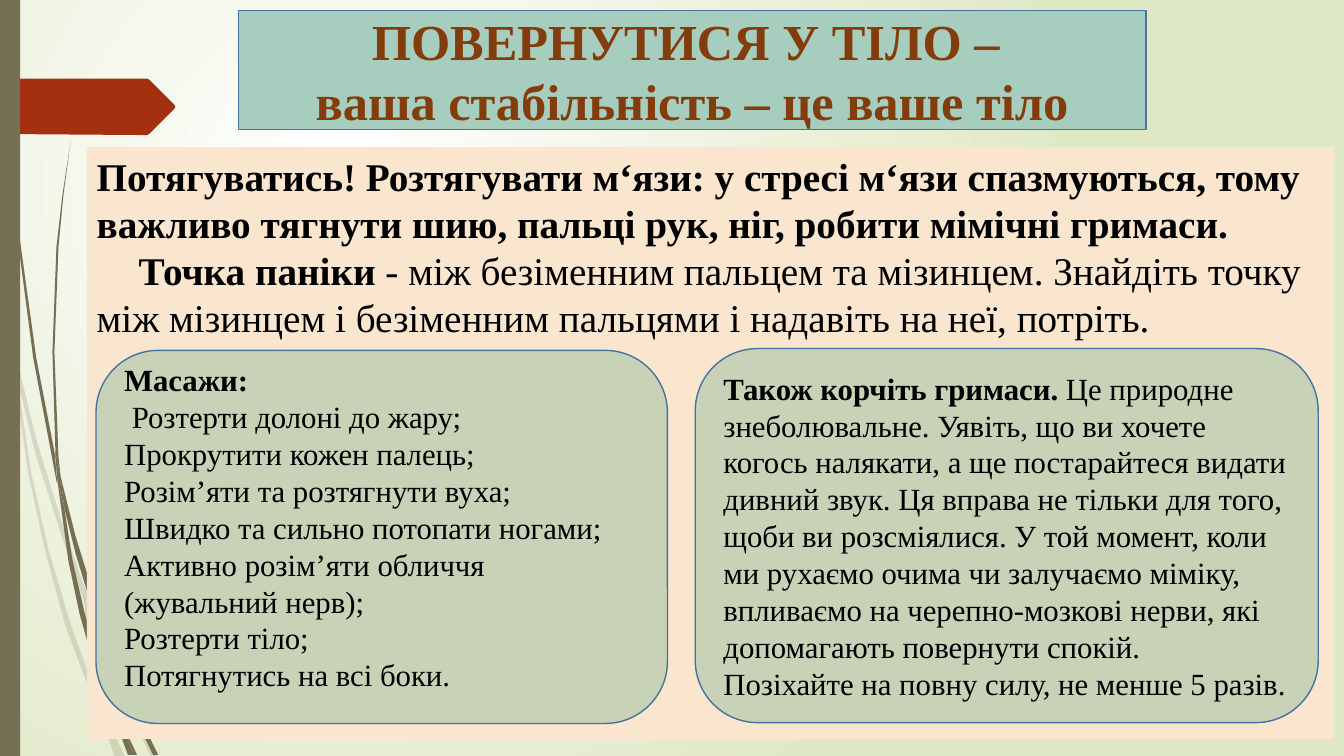
"""Build the slide about returning to the body: stretching, massages and grimaces."""
from lxml import etree
from pptx import Presentation
from pptx import util as u
from pptx.dml.color import RGBColor
from pptx.enum import shapes, text
from pptx.oxml import ns

WHITE = RGBColor(0xFF, 0xFF, 0xFF)
BLACK = RGBColor(0, 0, 0)
LIME = RGBColor(0xDF, 0xE8, 0xC4)
OLIVE = RGBColor(0x76, 0x6F, 0x54)
RUST = RGBColor(0xA5, 0x30, 0x10)
PEACH = RGBColor(0xFA, 0xE5, 0xCF)
MINT = RGBColor(0xA6, 0xCD, 0xBD)
SAGE = RGBColor(0xC7, 0xD2, 0xB7)
BLUE = RGBColor(0x43, 0x73, 0x9E)
BROWN = RGBColor(0x83, 0x3C, 0x0B)
FONT = "Times New Roman"
HUNDREDTH_INCH = u.Pt(0.72)

PALE_STEMS = [
    [(11, 350), (9, 322), (0, 282), (0, 299), (10, 344)],
    [(58, 522), (84, 599), (85, 586), (62, 520), (36, 436), (14, 345), (17, 376), (35, 450)],
    [(92, 607), (88, 596), (88, 610), (123, 694), (150, 751), (155, 751), (127, 692)],
    [(119, 751), (124, 751), (105, 711)],
    [(93, 683), (70, 619), (48, 545), (31, 469), (17, 376), (11, 350), (28, 470),
     (45, 547), (65, 621), (92, 693), (101, 714), (99, 707)],
    [(84, 599), (87, 646), (93, 683), (96, 692), (105, 711), (103, 706), (91, 646),
     (88, 610), (88, 608)],
    [(88, 584), (95, 522), (110, 462), (160, 349), (229, 245), (268, 198), (290, 175),
     (312, 154), (312, 153), (289, 175), (268, 197), (228, 244), (158, 348), (107, 461),
     (91, 521), (85, 584), (85, 586), (88, 596)],
    [(101, 714), (114, 751), (119, 751)],
    [(88, 608), (88, 610), (88, 596), (85, 586), (84, 599)],
    [(96, 692), (93, 683), (99, 707), (101, 714), (119, 751), (105, 711)],
]
DARK_STEMS = [
    [(7, 110), (17, 233), (33, 355), (56, 477), (57, 481), (55, 457), (55, 453), (36, 355),
     (19, 232), (8, 109), (5, 48), (4, 0), (3, 0), (4, 48)],
    [(88, 592), (106, 645), (106, 633), (106, 631), (93, 590), (75, 532), (60, 472),
     (64, 505), (75, 549)],
    [(113, 649), (110, 641), (111, 656), (132, 708), (152, 749), (157, 749), (136, 706)],
    [(110, 691), (98, 657), (84, 608), (72, 556), (64, 505), (57, 477), (68, 557), (79, 609),
     (93, 659), (111, 708), (117, 722), (116, 717)],
    [(60, 472), (58, 453), (54, 349), (58, 245), (63, 193), (70, 141), (62, 193), (56, 245),
     (52, 349), (55, 449)],
    [(133, 749), (136, 749), (122, 719)],
    [(57, 477), (64, 505), (60, 472), (55, 449), (55, 453)],
    [(117, 722), (127, 749), (131, 749)],
    [(116, 706), (110, 691), (116, 717), (117, 722), (130, 749), (133, 749), (122, 719)],
]
RIBBON = [(173, 108), (148, 133), (146, 134), (136, 134), (0, 133), (0, 78), (136, 78),
          (146, 78), (148, 79), (173, 104), (174, 106)]

TITLE = [[("ПОВЕРНУТИСЯ У ТІЛО – ", True)], [("ваша стабільність – це ваше тіло", True)]]
STRETCHING = [
    [("Потягуватись! Розтягувати м‘язи: у стресі м‘язи спазмуються, тому важливо тягнути "
      "шию, пальці рук, ніг, робити мімічні гримаси.", True)],
    [("Точка паніки ", True),
     ("- між безіменним пальцем та мізинцем. Знайдіть точку між мізинцем і безіменним "
      "пальцями і надавіть на неї, потріть.", False)],
]
MASSAGES = [
    [("Масажи:", True)],
    [(" Розтерти долоні до жару;", False)],
    [("Прокрутити кожен палець;", False)],
    [("Розім’яти та розтягнути вуха;", False)],
    [("Швидко та сильно потопати ногами;", False)],
    [("Активно розім’яти обличчя (жувальний нерв);", False)],
    [("Розтерти тіло;", False)],
    [("Потягнутись на всі боки.", False)],
]
GRIMACES = [
    [("Також корчіть гримаси.", True),
     (" Це природне знеболювальне. Уявіть, що ви хочете когось налякати, а ще постарайтеся "
      "видати дивний звук. Ця вправа не тільки для того, щоби ви розсміялися. У той момент, "
      "коли ми рухаємо очима чи залучаємо міміку, впливаємо на черепно-мозкові нерви, які "
      "допомагають повернути спокій.", False)],
    [("Позіхайте на повну силу, не менше 5 разів.", False)],
]


def paint(shape, fill, line=None):
    shape.fill.solid()
    shape.fill.fore_color.rgb = fill
    if line is None:
        shape.line.fill.background()
    else:
        shape.line.color.rgb = line
        shape.line.width = u.Pt(1)


def write(shape, paragraphs, size, color, align, anchor):
    frame = shape.text_frame
    frame.word_wrap = True
    frame.auto_size = text.MSO_AUTO_SIZE.NONE
    frame.vertical_anchor = anchor
    for index, spans in enumerate(paragraphs):
        para = frame.paragraphs[0] if index == 0 else frame.add_paragraph()
        para.alignment = align
        for words, bold in spans:
            span = para.add_run()
            span.text = words
            span.font.name = FONT
            span.font.size = u.Pt(size)
            span.font.bold = bold
            span.font.color.rgb = color


deck = Presentation()
deck.slide_width, deck.slide_height = u.Pt(960), u.Pt(540)
page = deck.slides.add_slide(deck.slide_layouts[5])

backdrop = page.background.fill
backdrop.gradient()
for stop, color in zip(backdrop.gradient_stops, (WHITE, LIME)):
    stop.color.rgb = color
gradient = page.background._cSld.find(".//" + ns.qn("a:gradFill"))
gradient.remove(gradient.find(ns.qn("a:lin")))
glow = etree.SubElement(gradient, ns.qn("a:path"), {"path": "circle"})
etree.SubElement(glow, ns.qn("a:fillToRect"), l="50000", t="50000", r="100000", b="100000")

outlines = [(points, OLIVE, 20) for points in PALE_STEMS]
outlines += [(points, OLIVE, 100) for points in DARK_STEMS]
outlines.append((RIBBON, RUST, 100))
for points, color, opacity in outlines:
    builder = page.shapes.build_freeform(*points[0], scale=HUNDREDTH_INCH)
    builder.add_line_segments(points[1:], close=True)
    outline = builder.convert_to_shape()
    outline.shadow.inherit = False
    paint(outline, color)
    if opacity < 100:
        tone = outline._element.spPr.find(".//" + ns.qn("a:srgbClr"))
        etree.SubElement(tone, ns.qn("a:alpha"), val=str(opacity * 1000))

title = page.shapes.title
title.left, title.top, title.width, title.height = map(u.Pt, (170.5, 7.7, 648, 85))
rounded = etree.Element(ns.qn("a:prstGeom"), prst="roundRect")
etree.SubElement(rounded, ns.qn("a:avLst"))
title._element.spPr.insert(1, rounded)
paint(title, MINT, BLUE)
write(title, TITLE, 36, BROWN, text.PP_ALIGN.CENTER, text.MSO_ANCHOR.MIDDLE)

RECT, ROUND = shapes.MSO_SHAPE.RECTANGLE, shapes.MSO_SHAPE.ROUNDED_RECTANGLE
TOP, MIDDLE = text.MSO_ANCHOR.TOP, text.MSO_ANCHOR.MIDDLE
panels = [
    (RECT, (0, 0, 14.4, 540), OLIVE, None, [], 28, TOP),
    (RECT, (62, 105.2, 891, 422.6), PEACH, None, STRETCHING, 28, TOP),
    (ROUND, (68.6, 250.3, 408.2, 266.5), SAGE, BLUE, MASSAGES, 22, MIDDLE),
    (ROUND, (496.6, 249, 445, 267.2), SAGE, BLUE, GRIMACES, 22, MIDDLE),
]
boxes = []
for kind, place, fill, line, paragraphs, size, anchor in panels:
    box = page.shapes.add_shape(kind, *map(u.Pt, place))
    box.shadow.inherit = False
    paint(box, fill, line)
    write(box, paragraphs, size, BLACK, text.PP_ALIGN.LEFT, anchor)
    boxes.append(box)

stripe, stretching, massages, grimaces = boxes
stretching.text_frame.paragraphs[1]._p.get_or_add_pPr().set("indent", str(u.Pt(30)))
massages.text_frame.margin_bottom = u.Pt(18)

deck.save("out.pptx")
